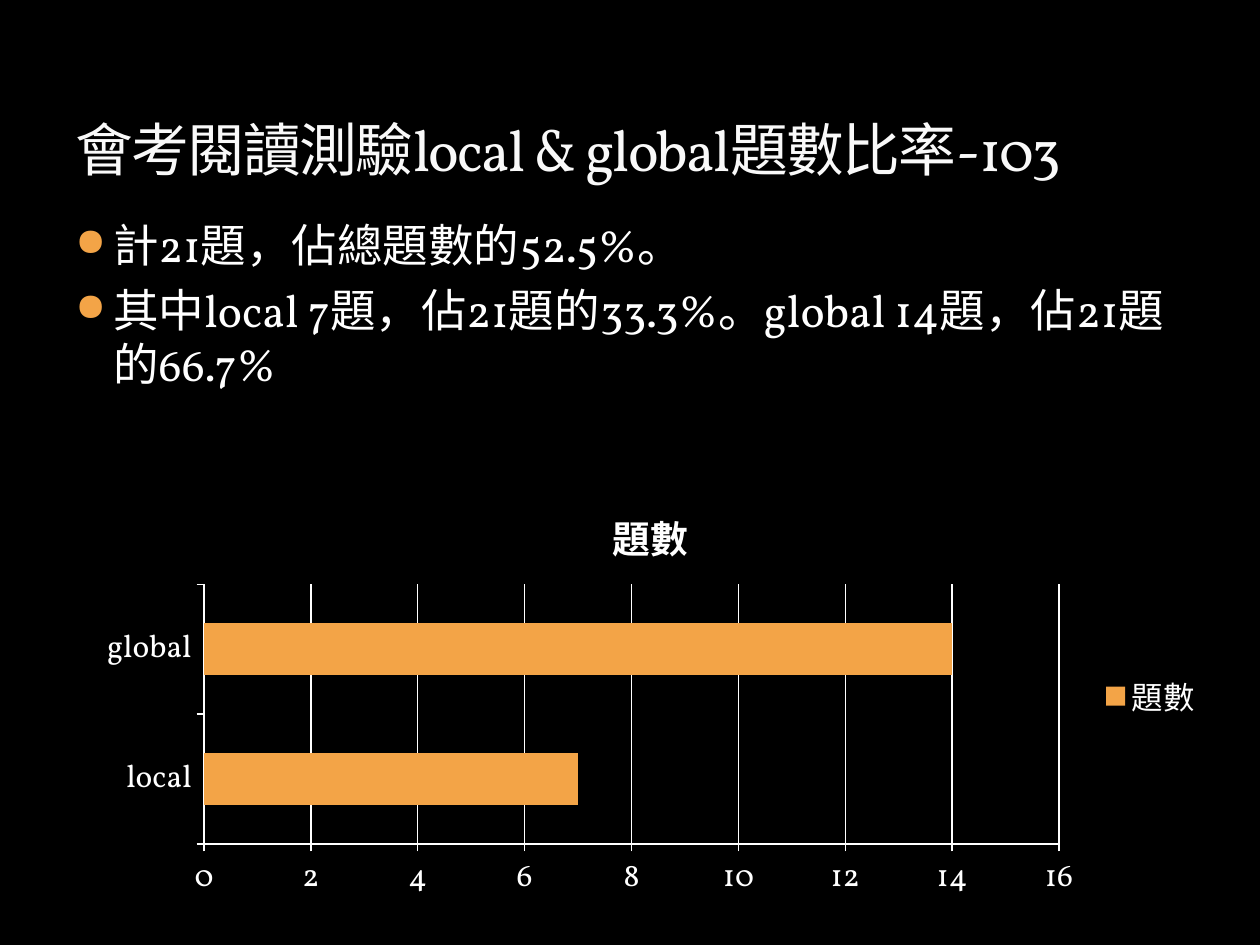
from dataclasses import dataclass

from lxml import etree
from pptx import Presentation
from pptx.chart.data import CategoryChartData
from pptx.dml.color import RGBColor
from pptx.enum.chart import XL_CHART_TYPE, XL_LEGEND_POSITION, XL_TICK_MARK
from pptx.enum.text import MSO_ANCHOR
from pptx.oxml.ns import qn
from pptx.util import Inches, Pt

BAR_CLUSTERED = XL_CHART_TYPE.BAR_CLUSTERED
LEGEND_RIGHT = XL_LEGEND_POSITION.RIGHT
TICK_OUTSIDE = XL_TICK_MARK.OUTSIDE
ANCHOR_BOTTOM = MSO_ANCHOR.BOTTOM
ANCHOR_TOP = MSO_ANCHOR.TOP


@dataclass(frozen=True)
class Theme:
    font: str = "Vollkorn"
    background: str = "000000"
    text: str = "FFFFFF"
    title: str = "F9F9F9"
    accent: str = "F3A447"
    title_size: float = 33
    body_size: float = 26
    chart_size: float = 18
    chart_title_size: float = 21.6


THEME = Theme()

TITLE = "會考閱讀測驗local & global題數比率-103"
POINTS = [
    "計21題，佔總題數的52.5%。",
    "其中local 7題，佔21題的33.3%。global 14題，佔21題的66.7%",
]
SERIES_NAME = "題數"
QUESTION_COUNTS = {"local": 7, "global": 14}


def style_font(font, size, color=THEME.text, bold=False):
    font.name = THEME.font
    font.size = Pt(size)
    font.bold = bold
    font.color.rgb = RGBColor.from_string(color)


def add_text(slide, box, paragraphs, size, color, anchor):
    shape = slide.shapes.add_textbox(*map(Inches, box))
    text_frame = shape.text_frame
    text_frame.word_wrap = True
    text_frame.vertical_anchor = anchor
    text_frame.text = "\n".join(paragraphs)
    for paragraph in text_frame.paragraphs:
        style_font(paragraph.runs[0].font, size, color)
    return text_frame


def add_title(slide):
    text_frame = add_text(slide, (0.5, 0.17, 9, 1.33), [TITLE],
                          THEME.title_size, THEME.title, ANCHOR_BOTTOM)
    run = text_frame.paragraphs[0].runs[0]
    run.font._element.set("spc", "-100")


def set_bullet(paragraph):
    paragraph.space_before = Pt(6)
    properties = paragraph._p.get_or_add_pPr()
    properties.set("marL", str(Inches(0.3)))
    properties.set("indent", str(Inches(-0.3)))
    color = etree.SubElement(properties, qn("a:buClr"))
    etree.SubElement(color, qn("a:srgbClr"), val=THEME.accent)
    etree.SubElement(properties, qn("a:buSzPct"), val="85000")
    etree.SubElement(properties, qn("a:buChar"), char="●")


def add_bullets(slide):
    text_frame = add_text(slide, (0.5, 1.67, 9, 5), POINTS,
                          THEME.body_size, THEME.text, ANCHOR_TOP)
    for paragraph in text_frame.paragraphs:
        set_bullet(paragraph)


def style_line(line):
    line.color.rgb = RGBColor.from_string(THEME.text)
    line.width = Pt(0.75)


def style_axis(axis, gridlines):
    axis.major_tick_mark = TICK_OUTSIDE
    axis.has_major_gridlines = gridlines
    style_line(axis.format.line)
    if gridlines:
        style_line(axis.major_gridlines.format.line)


def add_question_chart(slide):
    data = CategoryChartData()
    data.categories = list(QUESTION_COUNTS)
    data.add_series(SERIES_NAME, list(QUESTION_COUNTS.values()))
    box = map(Inches, (0.67, 3.83, 8.98, 3.39))
    chart = slide.shapes.add_chart(BAR_CLUSTERED, *box, data).chart
    style_font(chart.font, THEME.chart_size)

    chart.has_title = True
    title_frame = chart.chart_title.text_frame
    title_frame.text = SERIES_NAME
    style_font(title_frame.paragraphs[0].runs[0].font,
               THEME.chart_title_size, bold=True)

    chart.has_legend = True
    chart.legend.position = LEGEND_RIGHT
    chart.legend.include_in_layout = False

    style_axis(chart.category_axis, gridlines=False)
    style_axis(chart.value_axis, gridlines=True)

    plot = chart.plots[0]
    plot.gap_width = 150
    plot.vary_by_categories = False
    fill = plot.series[0].format.fill
    fill.solid()
    fill.fore_color.rgb = RGBColor.from_string(THEME.accent)


def main():
    presentation = Presentation()
    presentation.slide_width = Inches(10)
    presentation.slide_height = Inches(7.5)
    slide = presentation.slides.add_slide(presentation.slide_layouts[6])
    background = slide.background.fill
    background.solid()
    background.fore_color.rgb = RGBColor.from_string(THEME.background)
    add_bullets(slide)
    add_title(slide)
    add_question_chart(slide)
    presentation.save("out.pptx")


if __name__ == "__main__":
    main()
